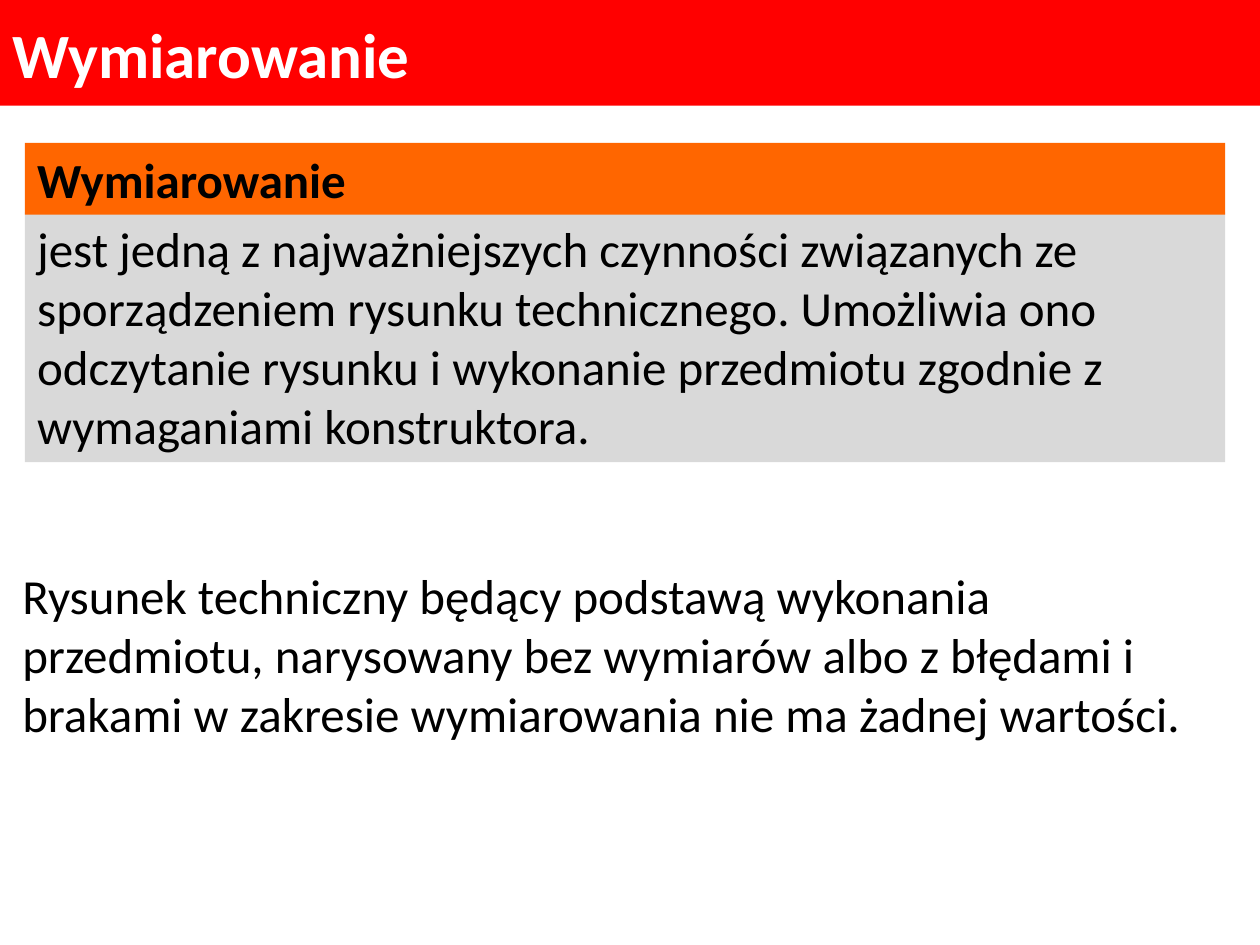
"""Build a slide that defines dimensioning in technical drawing."""
from dataclasses import dataclass

from pptx import Presentation
from pptx.dml.color import RGBColor
from pptx.enum.shapes import MSO_SHAPE as Shape
from pptx.enum.text import MSO_ANCHOR as Anchor, MSO_AUTO_SIZE as AutoSize, PP_ALIGN as Align
from pptx.util import Cm, Pt


@dataclass(frozen=True)
class Theme:
    font: str = "Calibri"
    title_size: int = 36
    text_size: int = 28
    banner: str = "FF0000"
    term: str = "FF6600"
    panel: str = "D9D9D9"
    light: str = "FFFFFF"
    dark: str = "000000"


theme = Theme()


def set_all(target, values):
    for name, value in values.items():
        setattr(target, name, value)


def write(block, text, size, color, bold=False, anchor=Anchor.TOP):
    frame = block.text_frame
    frame.text = text
    set_all(frame, {
        "word_wrap": True, "auto_size": AutoSize.NONE, "vertical_anchor": anchor,
        "margin_left": Cm(0.25), "margin_right": Cm(0.25),
        "margin_top": Cm(0.13), "margin_bottom": Cm(0.13),
    })
    paragraph = frame.paragraphs[0]
    set_all(paragraph, {"alignment": Align.LEFT, "line_spacing": 1.0, "space_before": Pt(0)})
    set_all(paragraph.font, {"name": theme.font, "size": Pt(size), "bold": bold})
    paragraph.font.color.rgb = RGBColor.from_string(color)


deck = Presentation()
set_all(deck, {"slide_width": Cm(25.4), "slide_height": Cm(19.05)})
slide = deck.slides.add_slide(deck.slide_layouts[5])

title = slide.shapes.title
set_all(title, {"left": Cm(0), "top": Cm(0), "width": deck.slide_width, "height": Cm(2.13)})
title.fill.solid()
title.fill.fore_color.rgb = RGBColor.from_string(theme.banner)
write(title, "Wymiarowanie", theme.title_size, theme.light, True, Anchor.MIDDLE)

conclusion = slide.shapes.add_textbox(Cm(0.2), Cm(11.28), Cm(24.89), Cm(3.84))
write(
    conclusion,
    "Rysunek techniczny będący podstawą wykonania przedmiotu, narysowany bez wymiarów "
    "albo z błędami i brakami w zakresie wymiarowania nie ma żadnej wartości.",
    theme.text_size, theme.dark,
)

definition = (
    "jest jedną z najważniejszych czynności związanych ze sporządzeniem rysunku "
    "technicznego. Umożliwia ono odczytanie rysunku i wykonanie przedmiotu zgodnie "
    "z wymaganiami konstruktora."
)
for text, top, height, color, bold in (
    (definition, 4.28, 5.04, theme.panel, False),
    ("Wymiarowanie", 2.88, 1.45, theme.term, True),
):
    panel = slide.shapes.add_shape(Shape.RECTANGLE, Cm(0.5), Cm(top), Cm(24.2), Cm(height))
    panel.shadow.inherit = False
    panel.fill.solid()
    panel.fill.fore_color.rgb = RGBColor.from_string(color)
    panel.line.fill.background()
    write(panel, text, theme.text_size, theme.dark, bold)

deck.save("out.pptx")
